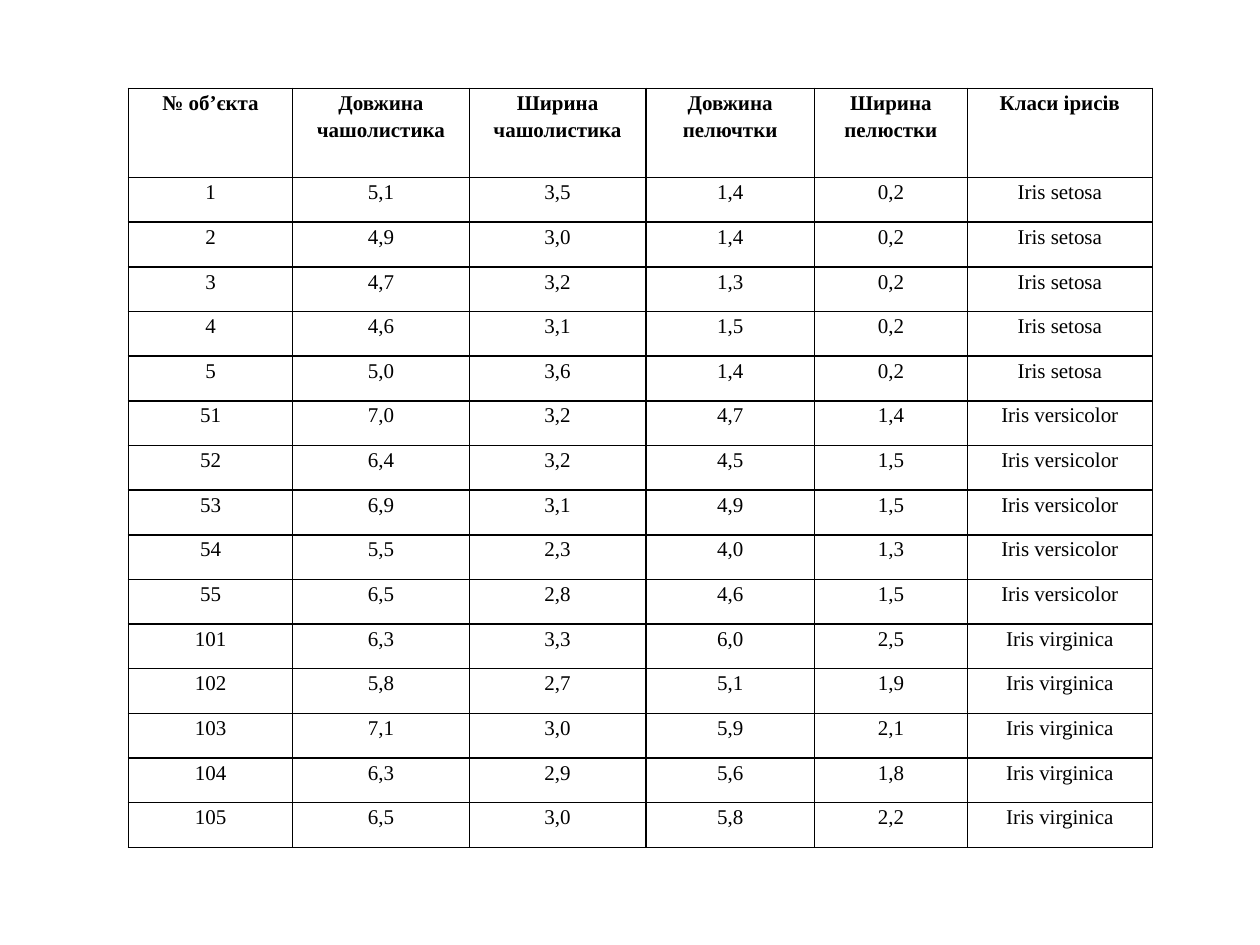
from dataclasses import dataclass

from pptx import Presentation
from pptx.dml.color import RGBColor
from pptx.enum.text import PP_ALIGN
from pptx.oxml import parse_xml
from pptx.oxml.ns import nsdecls
from pptx.util import Cm, Pt


@dataclass(frozen=True)
class Theme:
    ink: str = "000000"
    font: str = "Times New Roman"
    text_size: int = 12
    line_spacing: float = 1.15
    border_width: int = 1


HEADERS = ["№ об’єкта", "Довжина чашолистика", "Ширина чашолистика",
           "Довжина пелючтки", "Ширина пелюстки", "Класи ірисів"]
IRISES = {
    "Iris setosa": [
        ("1", "5,1", "3,5", "1,4", "0,2"),
        ("2", "4,9", "3,0", "1,4", "0,2"),
        ("3", "4,7", "3,2", "1,3", "0,2"),
        ("4", "4,6", "3,1", "1,5", "0,2"),
        ("5", "5,0", "3,6", "1,4", "0,2"),
    ],
    "Iris versicolor": [
        ("51", "7,0", "3,2", "4,7", "1,4"),
        ("52", "6,4", "3,2", "4,5", "1,5"),
        ("53", "6,9", "3,1", "4,9", "1,5"),
        ("54", "5,5", "2,3", "4,0", "1,3"),
        ("55", "6,5", "2,8", "4,6", "1,5"),
    ],
    "Iris virginica": [
        ("101", "6,3", "3,3", "6,0", "2,5"),
        ("102", "5,8", "2,7", "5,1", "1,9"),
        ("103", "7,1", "3,0", "5,9", "2,1"),
        ("104", "6,3", "2,9", "5,6", "1,8"),
        ("105", "6,5", "3,0", "5,8", "2,2"),
    ],
}
COLUMN_WIDTHS = [3.31, 3.56, 3.56, 3.4, 3.08, 3.73]
HEADER_HEIGHT, ROW_HEIGHT = 1.8, 0.9


def apply_format(target, values):
    for name, value in values.items():
        setattr(target, name, value)


class SlideWriter:
    def __init__(self, slide, theme):
        self.slide = slide
        self.theme = theme

    def table(self, left, top, widths, heights, rows):
        """Draw a bordered table whose first row is bold; lengths in cm."""
        frame = self.slide.shapes.add_table(
            len(rows), len(widths), Cm(left), Cm(top), Cm(sum(widths)), Cm(sum(heights)))
        table = frame.table
        apply_format(table, {"first_row": False, "horz_banding": False})
        for column, width in zip(table.columns, widths):
            column.width = Cm(width)
        for row, height in zip(table.rows, heights):
            row.height = Cm(height)
        for row_index, texts in enumerate(rows):
            for column_index, text in enumerate(texts):
                self.cell(table.cell(row_index, column_index), text, bold=row_index == 0)

    def cell(self, cell, text, bold):
        apply_format(cell, {"margin_left": Cm(0.18), "margin_right": Cm(0.18),
                            "margin_top": 0, "margin_bottom": 0})
        cell.fill.background()
        para = cell.text_frame.paragraphs[0]
        apply_format(para, {"alignment": PP_ALIGN.CENTER,
                            "line_spacing": self.theme.line_spacing})
        span = para.add_run()
        span.text = text
        apply_format(span.font, {"name": self.theme.font, "bold": bold,
                                 "size": Pt(self.theme.text_size)})
        span.font.color.rgb = RGBColor.from_string(self.theme.ink)
        self.borders(cell)

    def borders(self, cell):
        properties = cell._tc.get_or_add_tcPr()
        for position, side in enumerate("LRTB"):
            properties.insert(position, parse_xml(
                f'<a:ln{side} {nsdecls("a")} w="{Pt(self.theme.border_width)}">'
                f'<a:solidFill><a:srgbClr val="{self.theme.ink}"/></a:solidFill>'
                f'</a:ln{side}>'))


def main():
    deck = Presentation()
    apply_format(deck, {"slide_width": Cm(25.4), "slide_height": Cm(19.05)})
    writer = SlideWriter(deck.slides.add_slide(deck.slide_layouts[6]), Theme())
    samples = [(*values, species) for species, group in IRISES.items() for values in group]
    heights = [HEADER_HEIGHT] + [ROW_HEIGHT] * len(samples)
    writer.table(2.59, 1.78, COLUMN_WIDTHS, heights, [HEADERS, *samples])
    deck.save("out.pptx")


if __name__ == "__main__":
    main()
